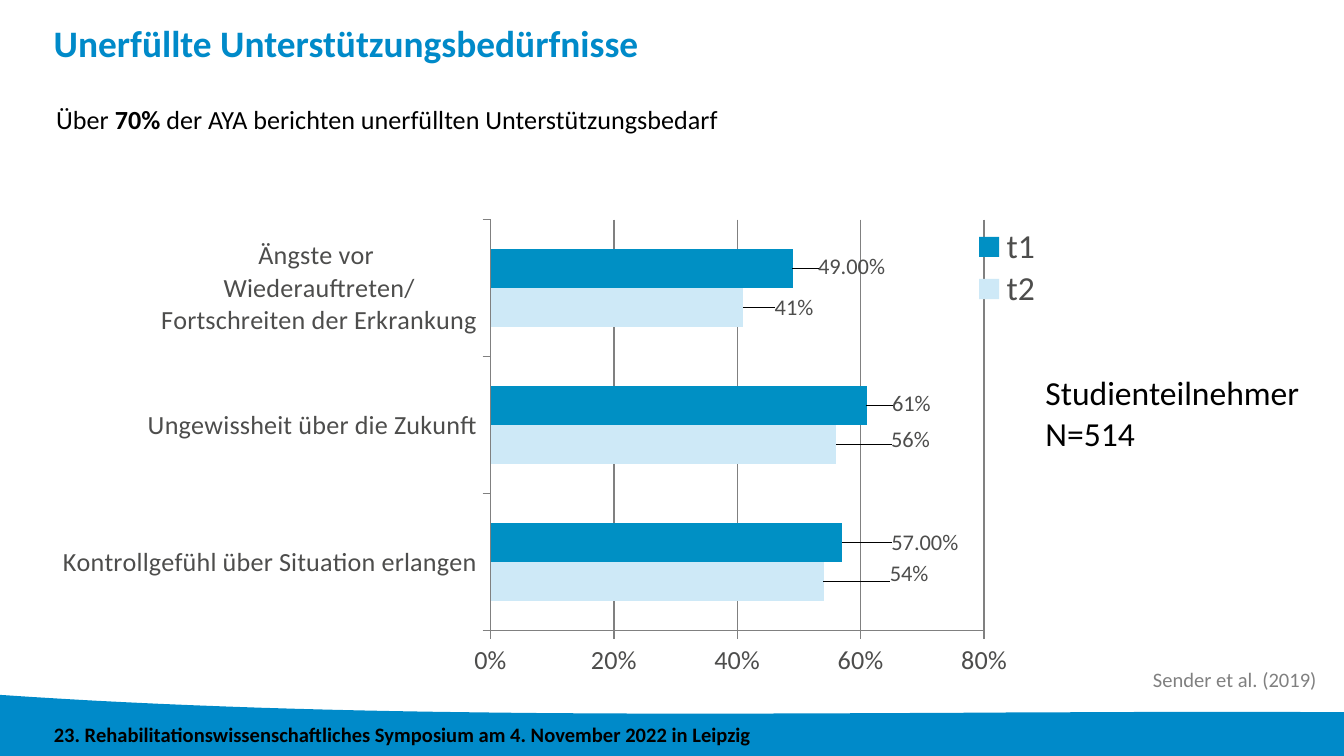
"""Build the slide on unmet support needs with a clustered bar chart."""
from lxml.etree import SubElement as Sub
from pptx import Presentation
from pptx.chart.data import CategoryChartData as Data
from pptx.dml.color import RGBColor as Rgb
from pptx.enum.chart import XL_CHART_TYPE as Kind
from pptx.enum.chart import XL_LABEL_POSITION as Spot
from pptx.enum.chart import XL_LEGEND_POSITION as Side
from pptx.enum.chart import XL_TICK_MARK as Tick
from pptx.enum.text import MSO_AUTO_SIZE as Fit
from pptx.oxml.ns import qn
from pptx.util import Inches, Pt

THEME = {
    "blue": "008AC9", "t1": "0090C4", "t2": "CEE9F7", "grid": "808080",
    "title": (20, "008AC9", True), "foot": (11, "000000", True),
    "lead": (14, "000000", False), "strong": (14, "000000", True),
    "note": (18, "000000", False), "cite": (11, "808080", False),
    "axis": (14, "4D4D4C", False), "key": (18, "4D4D4C", False),
    "label": (12, "4D4D4C", False),
}
EXT = "http://schemas.microsoft.com/office/drawing/2012/chart"


def style(font, name):
    size, tone, bold = THEME[name]
    for attr, value in {"name": "Calibri", "size": Pt(size), "bold": bold}.items():
        setattr(font, attr, value)
    font.color.rgb = Rgb.from_string(tone)


def place(node, index, modes, **shares):
    for old in node.findall(qn("c:layout")):
        node.remove(old)
    frame = Sub(node, qn("c:layout"))
    node.insert(index, frame)
    manual = Sub(frame, qn("c:manualLayout"))
    for tag, value in modes.items():
        Sub(manual, qn("c:" + tag)).set("val", value)
    for tag, value in shares.items():
        Sub(manual, qn("c:" + tag)).set("val", str(round(value / 100, 4)))


deck = Presentation()
deck.slide_width = Inches(10)
deck.slide_height = deck.slide_width * 9 // 16
col, row = deck.slide_width / 100, deck.slide_height / 100
slide = deck.slides.add_slide(deck.slide_layouts[6])
shapes = slide.shapes

bend = [(-0.1, 91.91), (31.7, 95.82), (66.6, 93.87), (100, 94.22)]
curve = []
for step in range(41):
    t = step / 40
    mix = [(1 - t) ** 3, 3 * t * (1 - t) ** 2, 3 * t * t * (1 - t), t ** 3]
    x, y = (sum(m * p[axis] for m, p in zip(mix, bend)) for axis in (0, 1))
    curve.append((round(x * col), round(y * row)))
base = [(deck.slide_width, deck.slide_height), (curve[0][0], deck.slide_height)]
pen = shapes.build_freeform(*curve[0])
pen.add_line_segments(curve[1:] + base)
wave = pen.convert_to_shape()
wave.shadow.inherit = False
wave.fill.solid()
wave.fill.fore_color.rgb = Rgb.from_string(THEME["blue"])
wave.line.fill.background()

texts = [
    ((4, 95.47, 72.8, 4.44), 0, True, None,
     [("23. Rehabilitationswissenschaftliches Symposium am 4. November 2022 in Leipzig", "foot")]),
    ((4, 2.67, 49.7, 11.73), 0, True, Pt(24),
     [("Unerfüllte Unterstützungsbedürfnisse", "title")]),
    ((76.8, 48.36, 22.2, 28.8), 1, True, None, [("Studienteilnehmer\vN=514", "note")]),
    ((3.2, 12.8, 62.6, 6.04), 1, True, None,
     [("Über ", "lead"), ("70%", "strong"),
      (" der AYA berichten unerfüllten Unterstützungsbedarf", "lead")]),
    ((84.8, 87.29, 14.3, 5.16), 1, False, None, [("Sender et al. (2019)", "cite")]),
]
for (x, y, w, h), inset, wrap, gap, runs in texts:
    box = shapes.add_textbox(round(x * col), round(y * row), round(w * col), round(h * row))
    frame = box.text_frame
    form = {"word_wrap": wrap, "auto_size": Fit.SHAPE_TO_FIT_TEXT if inset else Fit.NONE}
    if not inset:
        form.update(dict.fromkeys(
            ("margin_left", "margin_top", "margin_right", "margin_bottom"), 0))
    for attr, value in form.items():
        setattr(frame, attr, value)
    para = frame.paragraphs[0]
    para.line_spacing = gap
    for words, name in runs:
        for index, part in enumerate(words.split("\v")):
            if index:
                para.add_line_break()
            run = para.add_run()
            run.text = part
            style(run.font, name)

data = Data(number_format="0.00%")
data.categories = [
    "Kontrollgefühl über Situation erlangen",
    "Ungewissheit über die Zukunft",
    "Ängste vor \nWiederauftreten/\nFortschreiten der Erkrankung",
]
data.add_series("t2", (0.54, 0.56, 0.41))
data.add_series("t1", (0.57, 0.61, 0.49))
chart = shapes.add_chart(Kind.BAR_CLUSTERED, round(4 * col), round(23.11 * row),
                         round(74.2 * col), round(66.67 * row), data).chart
chart.has_title = False
style(chart.font, "note")
plot = chart.plots[0]
for attr, value in {"gap_width": 150, "overlap": 0, "vary_by_categories": False}.items():
    setattr(plot, attr, value)

cats, vals = chart.category_axis, chart.value_axis
for attr, value in {"minimum_scale": 0, "maximum_scale": 0.8, "major_unit": 0.2,
                    "has_major_gridlines": True}.items():
    setattr(vals, attr, value)
vals.tick_labels.number_format = "0%"
vals.tick_labels.number_format_is_linked = False
for axis in (cats, vals):
    axis.major_tick_mark = Tick.OUTSIDE
    axis.minor_tick_mark = Tick.NONE
    style(axis.tick_labels.font, "axis")
for line in (cats.format.line, vals.format.line, vals.major_gridlines.format.line):
    line.color.rgb = Rgb.from_string(THEME["grid"])
    line.width = Pt(0.75)

chart.has_legend = True
legend = chart.legend
legend.position = Side.RIGHT
legend.include_in_layout = False
style(legend.font, "key")

captions = {"t2": ("54%", "56%", "41%"), "t1": (None, "61%", None)}
for serie in plot.series:
    serie.format.fill.solid()
    serie.format.fill.fore_color.rgb = Rgb.from_string(THEME[serie.name])
    marks = serie.data_labels
    for attr, value in {"show_value": True, "number_format": "0.00%",
                        "number_format_is_linked": False,
                        "position": Spot.OUTSIDE_END}.items():
        setattr(marks, attr, value)
    style(marks.font, "label")
    for index, words in enumerate(captions[serie.name]):
        label = serie.points[index].data_label
        if words:
            run = label.text_frame.paragraphs[0].add_run()
            run.text = words
            style(run.font, "label")
        else:
            style(label.font, "label")
        label.position = Spot.OUTSIDE_END

root = chart.element
for node in root.iter(qn("c:dLbls")):
    for lead in node.findall(qn("c:showLeaderLines")):
        node.remove(lead)
    ext = Sub(Sub(node, qn("c:extLst")), qn("c:ext"),
              uri="{CE6537A1-D6FC-4f65-9D91-7224C49458BB}")
    Sub(ext, "{%s}showLeaderLines" % EXT, nsmap={"c15": EXT}).set("val", "0")

shifts = [(6.1, -1.6), (5, -1), (2.6, 0), (4.4, 0), (2, -0.3), (2, -0.4)]
for node, (x, y) in zip(root.iter(qn("c:dLbl")), shifts):
    place(node, 1, {}, x=x, y=y)
edge = {"xMode": "edge", "yMode": "edge"}
place(next(root.iter(qn("c:plotArea"))), 0, {"layoutTarget": "inner", **edge},
      x=43.8, y=8.9, w=49.5, h=81.6)
place(next(root.iter(qn("c:legend"))), 1, edge, x=91.6, y=10, w=8, h=17)

deck.save("out.pptx")
